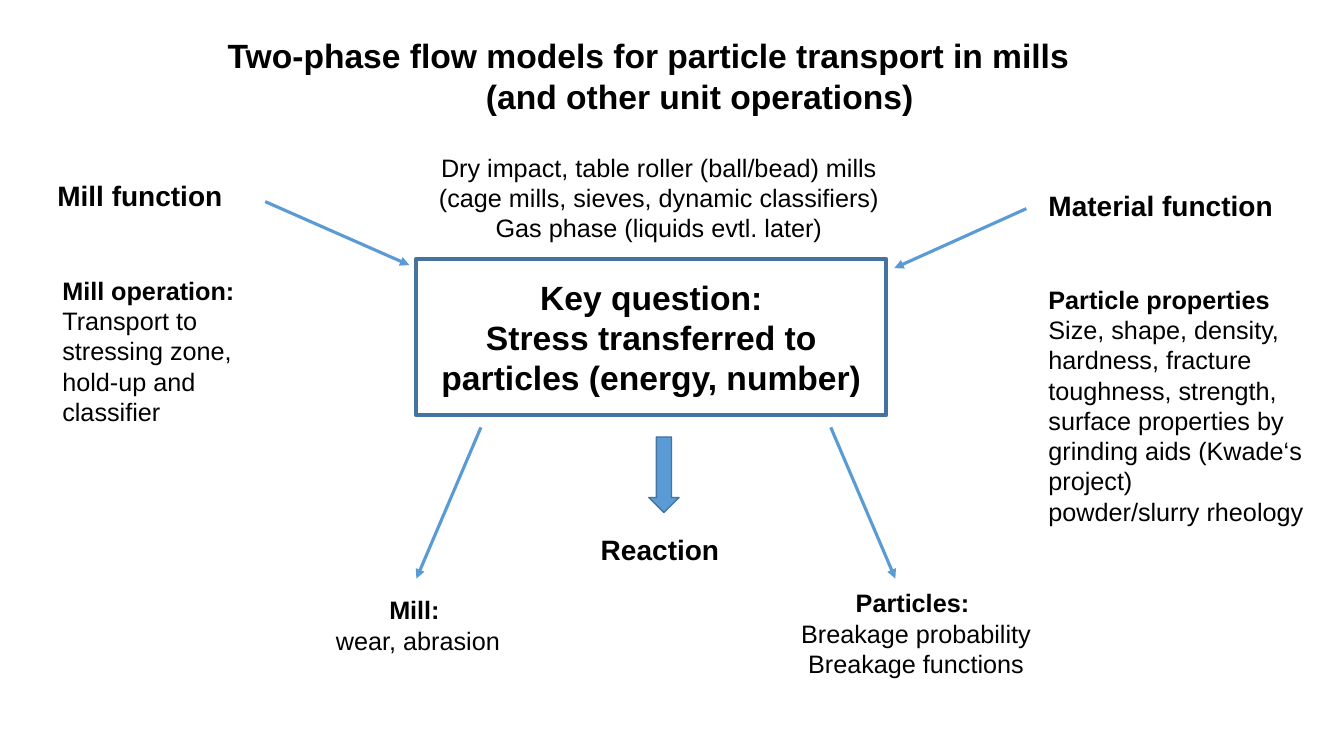
from dataclasses import dataclass

from lxml.etree import SubElement
from pptx import Presentation
from pptx.dml.color import RGBColor
from pptx.enum.shapes import MSO_CONNECTOR as Connector, MSO_SHAPE as Shape
from pptx.enum.text import MSO_ANCHOR as Anchor, MSO_AUTO_SIZE as AutoSize, PP_ALIGN as Align
from pptx.oxml.ns import qn
from pptx.util import Pt

PX = 9144  # EMU per px, 100 px to the inch


@dataclass(frozen=True)
class Theme:
    font: str = "Arial"
    text: RGBColor = RGBColor(0, 0, 0)
    paper: RGBColor = RGBColor(0xFF, 0xFF, 0xFF)
    accent: RGBColor = RGBColor(0x5B, 0x9B, 0xD5)
    outline: RGBColor = RGBColor(0x43, 0x73, 0x9E)
    title: int = 24
    heading: int = 20
    body: int = 18
    frame_width: float = 3
    arrow_width: float = 2.25
    block_width: float = 1


THEME = Theme()


@dataclass(frozen=True)
class Line:
    text: str
    bold: bool = False
    align: Align = Align.LEFT


@dataclass(frozen=True)
class Note:
    box: tuple[int, int, int, int]
    size: int
    lines: list[Line]


@dataclass(frozen=True)
class Arrow:
    start: tuple[int, int]
    end: tuple[int, int]


def emu(lengths: tuple[int, ...]) -> list[int]:
    return [length * PX for length in lengths]


def stack(*texts: str, bold: int = 0, align: Align = Align.LEFT) -> list[Line]:
    """Lines that share an alignment, the first few of them bold."""
    return [Line(text, row < bold, align) for row, text in enumerate(texts)]


def write(frame, lines: list[Line], size: int) -> None:
    frame.word_wrap = True
    for row, line in enumerate(lines):
        paragraph = frame.add_paragraph() if row else frame.paragraphs[0]
        paragraph.alignment = line.align
        run = paragraph.add_run()
        run.text = line.text
        font_format = {"name": THEME.font, "size": Pt(size), "bold": line.bold}
        for attribute, value in font_format.items():
            setattr(run.font, attribute, value)
        run.font.color.rgb = THEME.text


def draw_note(shapes, note: Note) -> None:
    frame = shapes.add_textbox(*emu(note.box)).text_frame
    write(frame, note.lines, note.size)
    frame.auto_size = AutoSize.SHAPE_TO_FIT_TEXT


def draw_block(shapes, kind: Shape, box: tuple[int, int, int, int], fill: RGBColor, width: float):
    block = shapes.add_shape(kind, *emu(box))
    block.shadow.inherit = False
    block.fill.solid()
    block.fill.fore_color.rgb = fill
    block.line.color.rgb = THEME.outline
    block.line.width = Pt(width)
    return block


def draw_arrow(shapes, arrow: Arrow) -> None:
    connector = shapes.add_connector(Connector.STRAIGHT, *emu(arrow.start + arrow.end))
    connector.line.color.rgb = THEME.accent
    connector.line.width = Pt(THEME.arrow_width)
    SubElement(connector.line._get_or_add_ln(), qn("a:tailEnd"), type="triangle")
    SubElement(connector._element.spPr, qn("a:effectLst"))


KEY_QUESTION = stack("Key question:", "Stress transferred to particles (energy, number)",
                     bold=2, align=Align.CENTER)

NOTES = [
    # Title and scope
    Note((216, 30, 956, 91), THEME.title, [
        Line("Two-phase flow models for particle transport in mills", True),
        Line("(and other unit operations)", True, Align.CENTER),
    ]),
    Note((406, 146, 495, 101), THEME.body, stack(
        "Dry impact, table roller (ball/bead) mills",
        "(cage mills, sieves, dynamic classifiers)",
        "Gas phase (liquids evtl. later)", align=Align.CENTER)),
    # Mill side
    Note((47, 172, 221, 44), THEME.heading, stack("Mill function", bold=1)),
    Note((52, 268, 217, 162), THEME.body, stack(
        "Mill operation:", "Transport to stressing zone,", "hold-up and", "classifier", bold=1)),
    # Material side
    Note((1030, 182, 262, 44), THEME.heading, stack("Material function", bold=1)),
    Note((1030, 277, 282, 283), THEME.body, stack(
        "Particle properties", "Size, shape, density,", "hardness, fracture",
        "toughness, strength,", "surface properties by grinding aids (Kwade‘s project)",
        "powder/slurry rheology", bold=1)),
    # Reaction and its outcomes
    Note((586, 523, 165, 44), THEME.heading, stack("Reaction", bold=1)),
    Note((277, 585, 275, 71), THEME.body, stack(
        "Mill: ", "wear, abrasion", bold=1, align=Align.CENTER)),
    Note((730, 578, 357, 101), THEME.body, stack(
        "Particles: ", "Breakage probability", "Breakage functions",
        bold=1, align=Align.CENTER)),
]

ARROWS = [
    Arrow((263, 200), (406, 263)),
    Arrow((1018, 207), (887, 266)),
    Arrow((477, 424), (413, 574)),
    Arrow((824, 424), (888, 574)),
]


def main() -> None:
    deck = Presentation()
    deck.slide_width, deck.slide_height = emu((1333, 750))
    shapes = deck.slides.add_slide(deck.slide_layouts[6]).shapes

    # Key question in the centre
    question = draw_block(shapes, Shape.RECTANGLE, (413, 257, 466, 155),
                          THEME.paper, THEME.frame_width)
    write(question.text_frame, KEY_QUESTION, THEME.title)
    question.text_frame.vertical_anchor = Anchor.MIDDLE

    # Surrounding texts and the arrows between them
    for note in NOTES:
        draw_note(shapes, note)
    for arrow in ARROWS:
        draw_arrow(shapes, arrow)

    # Block arrow down to the reaction
    reaction_arrow = draw_block(shapes, Shape.RIGHT_ARROW, (621, 456, 75, 30),
                                THEME.accent, THEME.block_width)
    reaction_arrow.rotation = 90

    deck.save("out.pptx")


if __name__ == "__main__":
    main()
